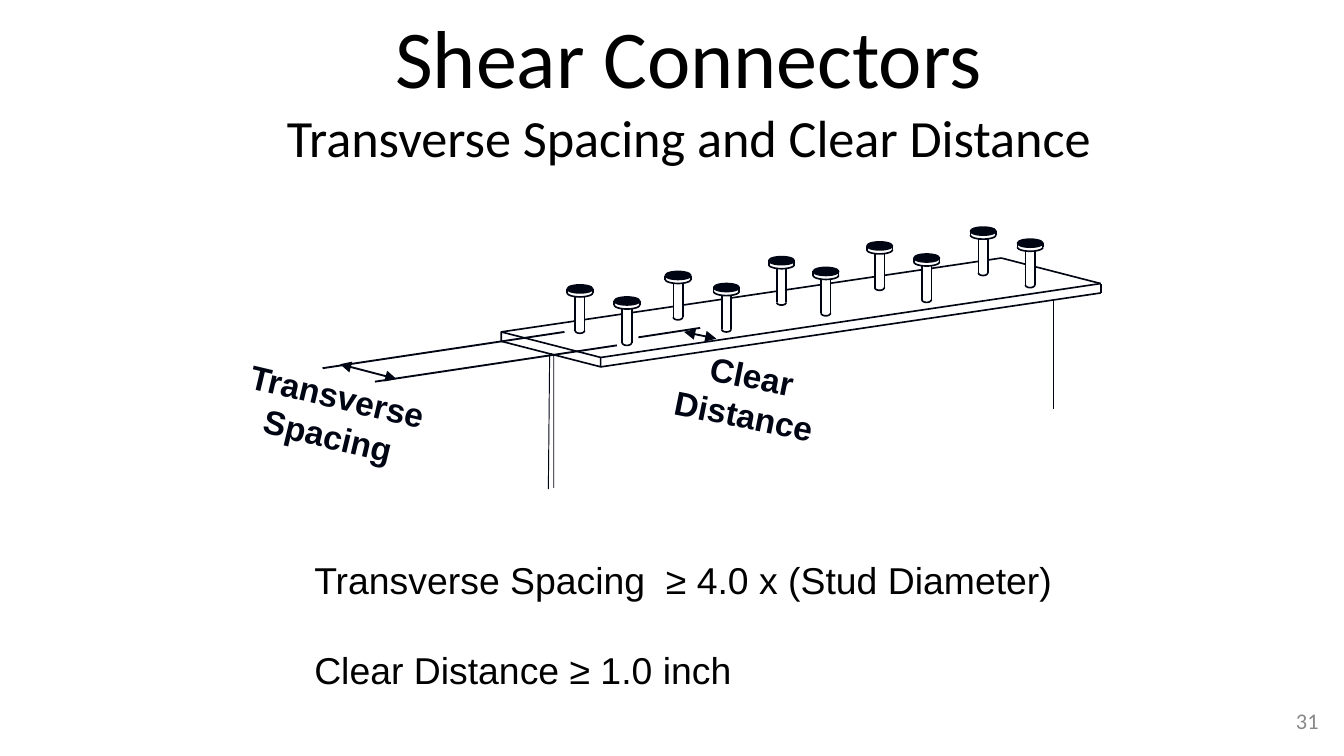
from math import cos, pi, sin
from typing import NamedTuple

from lxml.etree import SubElement
from pptx import Presentation
from pptx.dml.color import RGBColor
from pptx.enum.shapes import MSO_CONNECTOR as Connector, MSO_SHAPE as Shape
from pptx.enum.text import MSO_ANCHOR as Anchor, PP_ALIGN as Align
from pptx.oxml.ns import qn
from pptx.util import Emu, Pt

PX = 9144  # 100 px to the inch
SLIDE_WIDTH = 1000
INK, BLACK, GREY = "000514", "000000", "898989"
EDGE, WEB, DIMENSION = 0.88, 0.5, 1  # line widths in points


class Point(NamedTuple):
    x: float
    y: float


class Line(NamedTuple):
    start: Point
    end: Point
    width: float = EDGE
    arrows: bool = False


class Stud(NamedTuple):
    left: int
    top: int


class Run(NamedTuple):
    text: str
    size: int


class TextBox(NamedTuple):
    left: int
    top: int
    width: int
    height: int
    paragraphs: list[list[Run]]  # runs of a paragraph stand on separate lines
    font: str
    color: str = BLACK
    align: Align = Align.LEFT
    anchor: Anchor = Anchor.TOP
    inset: tuple[int, int] = (10, 5)
    gap: int = 0
    bold: bool = False
    rotation: float = 0


def px(value: float) -> Emu:
    return Emu(round(value * PX))


def rgb(color: str) -> RGBColor:
    return RGBColor.from_string(color)


def draw_line(line: Line) -> None:
    ends = [px(value) for value in (*line.start, *line.end)]
    connector = slide.shapes.add_connector(Connector.STRAIGHT, *ends)
    connector.line.color.rgb = rgb(INK)
    connector.line.width = Pt(line.width)
    if line.arrows:
        for tag in ("a:headEnd", "a:tailEnd"):
            SubElement(connector.line._get_or_add_ln(), qn(tag), type="triangle", w="med", len="med")
    SubElement(connector._element.spPr, qn("a:effectLst"))


def draw_path(points: list[Point], close: bool = False, width: float = EDGE) -> None:
    first, *others = [(px(x), px(y)) for x, y in points]
    builder = slide.shapes.build_freeform(*first, scale=1.0)
    builder.add_line_segments(others, close=close)
    shape = builder.convert_to_shape()
    shape.shadow.inherit = False
    shape.fill.background()
    shape.line.color.rgb = rgb(INK)
    shape.line.width = Pt(width)


def draw_bowl(left: float, top: float, width: float, depth: float) -> None:
    """Draw the lower half of an ellipse."""
    radius, steps = width / 2, 12
    angles = [pi * step / steps for step in range(steps + 1)]
    draw_path([Point(left + radius - radius * cos(a), top + depth * sin(a)) for a in angles])


def draw_stud(stud: Stud) -> None:
    left, top = stud
    head = slide.shapes.add_shape(Shape.OVAL, px(left), px(top), px(HEAD), px(6))
    head.shadow.inherit = False
    head.fill.solid()
    head.fill.fore_color.rgb = rgb(INK)
    head.line.color.rgb = rgb(INK)
    head.line.width = Pt(EDGE)
    draw_bowl(left, top + 6, HEAD, 3)
    draw_bowl(left + SHANK_LEFT, top + 34, SHANK, 2)
    for x, upper, lower in (
        (0, 3, 6), (HEAD, 3, 6), (SHANK_LEFT, 9, 34), (SHANK_LEFT + SHANK, 9, 34),
    ):
        draw_line(Line(Point(left + x, top + upper), Point(left + x, top + lower)))


def draw_hidden_edge(start: Point, end: Point, studs: list[Stud]) -> None:
    """Draw an edge that is interrupted where stud shanks stand before it."""
    stops = [start.x]
    for stud in studs:
        stops += [stud.left + SHANK_LEFT, stud.left + SHANK_LEFT + SHANK]
    stops.append(end.x)
    slope = (end.y - start.y) / (end.x - start.x)
    points = [Point(x, start.y + slope * (x - start.x)) for x in stops]
    for left, right in zip(points[::2], points[1::2]):
        draw_line(Line(left, right))


def draw_text(box: TextBox) -> None:
    shape = slide.shapes.add_textbox(px(box.left), px(box.top), px(box.width), px(box.height))
    shape.rotation = box.rotation
    frame = shape.text_frame
    frame.word_wrap = True
    frame.vertical_anchor = box.anchor
    frame.margin_left = frame.margin_right = px(box.inset[0])
    frame.margin_top = frame.margin_bottom = px(box.inset[1])
    for index, runs in enumerate(box.paragraphs):
        paragraph = frame.add_paragraph() if index else frame.paragraphs[0]
        paragraph.alignment = box.align
        if index:
            paragraph.space_before = Pt(box.gap)
        for position, part in enumerate(runs):
            if position:
                paragraph.add_line_break()
            run = paragraph.add_run()
            run.text = part.text
            run.font.name = box.font
            run.font.size = Pt(part.size)
            run.font.bold = box.bold
            run.font.color.rgb = rgb(box.color)


presentation = Presentation()
presentation.slide_width = px(SLIDE_WIDTH)
presentation.slide_height = px(SLIDE_WIDTH * 9 / 16)
slide = presentation.slides.add_slide(presentation.slide_layouts[6])

# Studs, from left to right
HEAD, SHANK, SHANK_LEFT = 19, 7, 6
STUDS = [
    Stud(422, 212), Stud(457, 221), Stud(495, 202), Stud(531, 211), Stud(572, 191),
    Stud(605, 199), Stud(645, 180), Stud(680, 189), Stud(722, 169), Stud(757, 178),
]
for stud in STUDS:
    draw_stud(stud)

# Flange plate
BACK_CORNER, RIGHT_CORNER = Point(745, 192), Point(819, 211)
draw_hidden_edge(Point(373, 247), BACK_CORNER, STUDS[:-1])
draw_hidden_edge(BACK_CORNER, RIGHT_CORNER, STUDS[-1:])
draw_path([Point(373, 254), Point(373, 247), Point(447, 266), Point(447, 273)], close=True)

LINES = [
    # Front edges of the plate
    Line(Point(447, 266), RIGHT_CORNER),
    Line(Point(447, 273), Point(819, 218)),
    Line(Point(819, 218), RIGHT_CORNER),
    # Web
    Line(Point(784, 304), Point(784, 223), WEB),
    Line(Point(408, 364), Point(409, 263), WEB),
    # Transverse spacing
    Line(Point(240, 274), Point(420, 247), DIMENSION),
    Line(Point(279, 284), Point(459, 257), DIMENSION),
    Line(Point(253, 271), Point(295, 282), DIMENSION, arrows=True),
    # Clear distance
    Line(Point(475, 251), Point(521, 244), DIMENSION),
    Line(Point(509, 247), Point(533, 252), DIMENSION, arrows=True),
]
for line in LINES:
    draw_line(line)
draw_path([Point(410, 263), Point(412, 265), Point(412, 363)], width=WEB)

# Title, labels, rules and slide number
TEXTS = [
    TextBox(62, 0, 901, 94,
            [[Run("Shear Connectors", 44), Run("Transverse Spacing and Clear Distance", 28)]],
            "Calibri", align=Align.CENTER),
    TextBox(165, 279, 165, 61, [[Run("Transverse Spacing", 18)]], "Arial", INK,
            Align.CENTER, inset=(0, 0), bold=True, rotation=13.4),
    TextBox(474, 264, 165, 61, [[Run("Clear Distance", 18)]], "Arial", INK,
            Align.CENTER, inset=(0, 0), bold=True, rotation=11.4),
    TextBox(224, 410, 584, 111,
            [[Run("Transverse Spacing  ≥ 4.0 x (Stud Diameter)", 20)],
             [Run("Clear Distance ≥ 1.0 inch", 20)]], "Arial", gap=24),
    TextBox(758, 521, 233, 30, [[Run("31", 12)]], "Calibri", GREY, Align.RIGHT, Anchor.MIDDLE),
]
for box in TEXTS:
    draw_text(box)

presentation.save("out.pptx")
